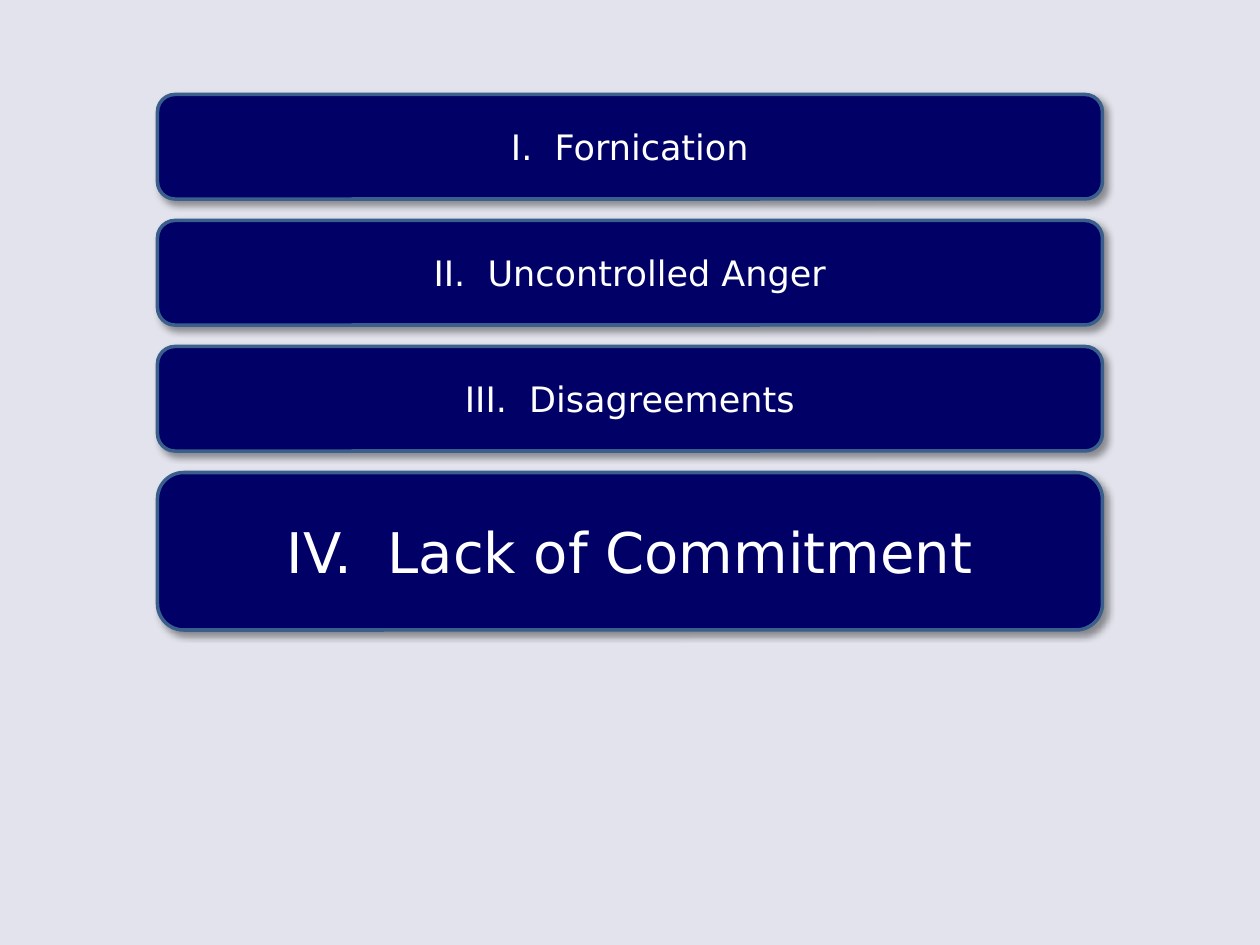
from lxml import etree
from pptx import Presentation
from pptx.dml.color import RGBColor
from pptx.enum.shapes import MSO_SHAPE
from pptx.enum.text import MSO_ANCHOR, PP_ALIGN
from pptx.oxml import parse_xml
from pptx.util import Inches, Pt

ROUNDED = MSO_SHAPE.ROUNDED_RECTANGLE
MIDDLE = MSO_ANCHOR.MIDDLE
CENTER = PP_ALIGN.CENTER
NAVY = RGBColor(0x00, 0x00, 0x66)
STEEL = RGBColor(0x3A, 0x5F, 0x8C)
WHITE = RGBColor(0xFF, 0xFF, 0xFF)
PALE = RGBColor(0xE2, 0xE3, 0xEC)
FONT = "DejaVu Sans"
NS = "http://schemas.openxmlformats.org/drawingml/2006/main"
SHADOW = f"""<a:effectLst xmlns:a="{NS}">
<a:outerShdw blurRad="{Pt(4)}" dist="{Pt(3)}" dir="2700000" algn="tl" rotWithShape="0">
<a:srgbClr val="000000"><a:alpha val="40000"/></a:srgbClr>
</a:outerShdw></a:effectLst>"""
LEFT, TOP, WIDTH, PITCH = 1.25, 0.75, 7.5, 1.0
POINTS = [
    ("I.  Fornication", 0.83, 20),
    ("II.  Uncontrolled Anger", 0.83, 20),
    ("III.  Disagreements", 0.83, 20),
    ("IV.  Lack of Commitment", 1.25, 32),
]


def set_text(tf, text, size=20, color=WHITE, align=CENTER):
    """Write one formatted paragraph into a text frame."""
    tf.word_wrap = True
    tf.vertical_anchor = MIDDLE
    p = tf.paragraphs[0]
    p.alignment = align
    r = p.add_run()
    r.text = text
    r.font.name = FONT
    r.font.size = Pt(size)
    r.font.color.rgb = color


def add_shadow(sp):
    """Give a shape a soft shadow to the lower right."""
    sp.shadow.inherit = False
    effects = sp._element.spPr.find(etree.QName(NS, "effectLst").text)
    effects.getparent().replace(effects, parse_xml(SHADOW))


def add_bar(s, text, top, height, size):
    """Add one rounded outline bar."""
    sp = s.shapes.add_shape(
        ROUNDED, Inches(LEFT), Inches(top), Inches(WIDTH), Inches(height)
    )
    sp.fill.solid()
    sp.fill.fore_color.rgb = NAVY
    sp.line.color.rgb = STEEL
    sp.line.width = Pt(2)
    add_shadow(sp)
    set_text(sp.text_frame, text, size=size)


def main():
    """Build the sermon outline slide."""
    prs = Presentation()
    prs.slide_width, prs.slide_height = Inches(10), Inches(7.5)
    s = prs.slides.add_slide(prs.slide_layouts[6])
    s.background.fill.solid()
    s.background.fill.fore_color.rgb = PALE
    for i, (text, height, size) in enumerate(POINTS):
        add_bar(s, text, TOP + i * PITCH, height, size)
    prs.save("out.pptx")


if __name__ == "__main__":
    main()
